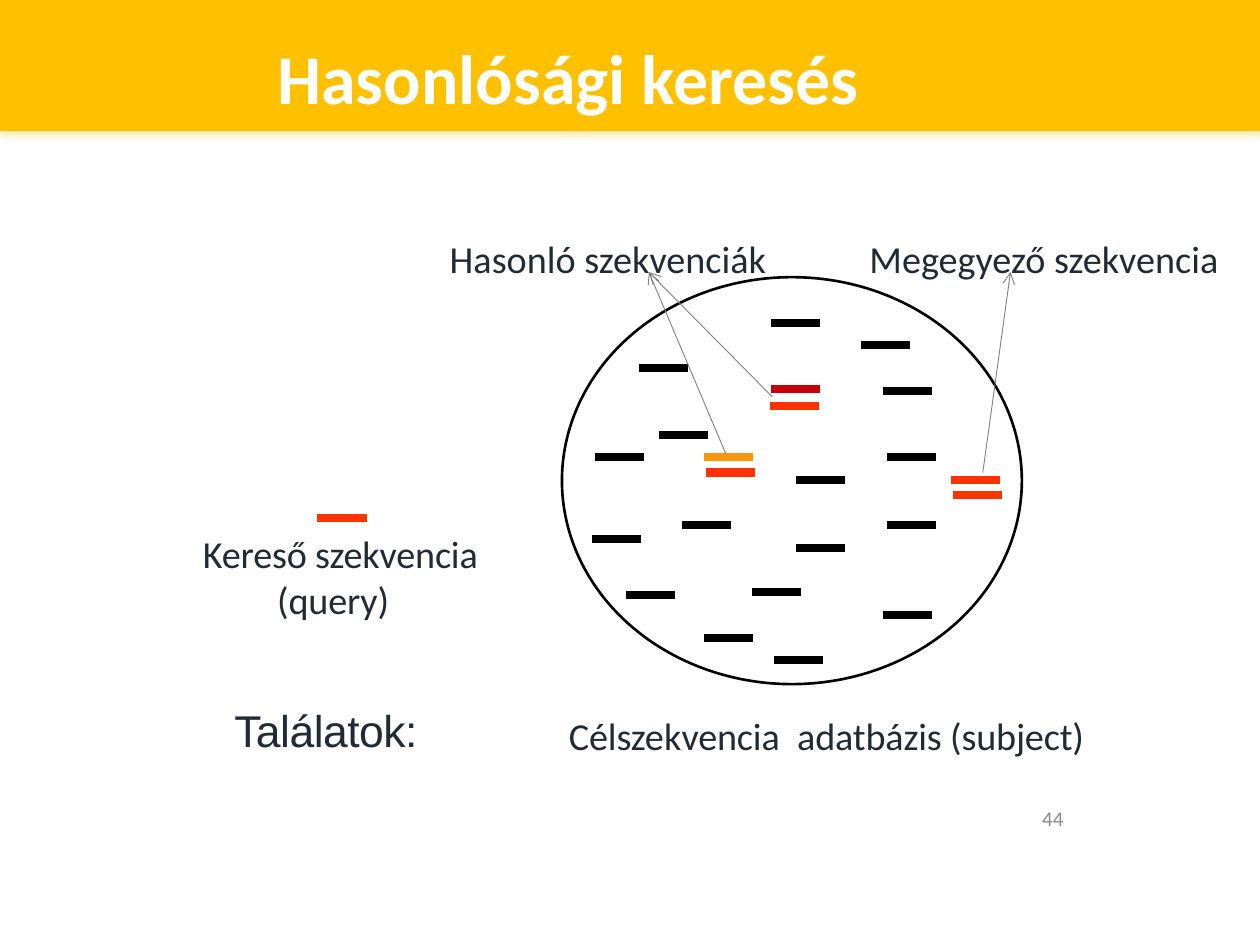
from lxml import etree
from pptx import Presentation
from pptx.dml.color import RGBColor
from pptx.enum.shapes import MSO_CONNECTOR, MSO_SHAPE
from pptx.enum.text import MSO_ANCHOR, MSO_AUTO_SIZE, PP_ALIGN
from pptx.oxml.ns import qn
from pptx.util import Inches, Pt

STRAIGHT = MSO_CONNECTOR.STRAIGHT
RECTANGLE, OVAL = MSO_SHAPE.RECTANGLE, MSO_SHAPE.OVAL
TOP, MIDDLE = MSO_ANCHOR.TOP, MSO_ANCHOR.MIDDLE
FIT_SHAPE = MSO_AUTO_SIZE.SHAPE_TO_FIT_TEXT
LEFT, CENTER, RIGHT = PP_ALIGN.LEFT, PP_ALIGN.CENTER, PP_ALIGN.RIGHT

AMBER = RGBColor(0xFF, 0xC0, 0x00)
WHITE = RGBColor(0xFF, 0xFF, 0xFF)
BLACK = RGBColor(0x00, 0x00, 0x00)
SLATE = RGBColor(0x22, 0x2A, 0x35)
GREY = RGBColor(0x80, 0x80, 0x80)
PALE_GREY = RGBColor(0x8C, 0x8C, 0x8C)
QUERY_RED = RGBColor(0xFF, 0x33, 0x00)
CRIMSON = RGBColor(0xC4, 0x00, 0x0A)
ORANGE = RGBColor(0xFF, 0x94, 0x0D)

SEQUENCE_LENGTH = 0.39
HANGING = (0.6, -0.59)

UNRELATED_SEQUENCES = [
    (5.41, 4.17), (5.97, 4.7), (4.97, 4.72), (5.59, 5.06), (6.32, 4.35),
    (5.23, 3.45), (6.32, 3.81), (7.04, 4.17), (6.14, 5.24), (7.01, 4.88),
    (7.04, 3.63), (7.01, 3.1), (6.12, 2.56), (5.07, 2.92), (4.72, 3.63),
    (4.7, 4.28), (6.83, 2.74),
]
HITS = [(6.12, 3.09, CRIMSON), (5.59, 3.63, ORANGE), (7.55, 3.81, QUERY_RED)]
QUERY_COPIES = [(2.52, 4.11), (5.6, 3.75), (6.11, 3.22), (7.56, 3.93)]
SIMILAR_TIP, IDENTICAL_TIP = (5.15, 2.16), (8.02, 2.16)


class SlideBuilder:
    font = "Calibri"
    size = 21.8
    color = SLATE

    def __init__(self, slide):
        self.slide = slide

    def band(self, left, top, width, height, color):
        band = self.slide.shapes.add_shape(
            RECTANGLE, Inches(left), Inches(top), Inches(width), Inches(height))
        band.fill.solid()
        band.fill.fore_color.rgb = color
        band.line.fill.background()
        band.shadow.inherit = False
        effects = band._element.spPr.find(qn("a:effectLst"))
        shadow = etree.SubElement(
            effects, qn("a:outerShdw"), blurRad=str(Pt(3.5)), dist=str(Pt(2.2)),
            dir="5400000", algn="t", rotWithShape="0")
        tint = etree.SubElement(shadow, qn("a:srgbClr"), val=str(color))
        etree.SubElement(tint, qn("a:alpha"), val="32000")

    def ellipse(self, left, top, width, height):
        ellipse = self.slide.shapes.add_shape(
            OVAL, Inches(left), Inches(top), Inches(width), Inches(height))
        ellipse.shadow.inherit = False
        ellipse.fill.background()
        ellipse.line.color.rgb = BLACK
        ellipse.line.width = Pt(1.5)

    def line(self, start, end, color, weight):
        line = self.slide.shapes.add_connector(
            STRAIGHT, *(Inches(value) for value in (*start, *end)))
        line.line.color.rgb = color
        line.line.width = Pt(weight)
        etree.SubElement(line._element.spPr, qn("a:effectLst"))
        return line

    def sequence(self, left, top, color):
        self.line((left, top), (left + SEQUENCE_LENGTH, top), color, 4.6)

    def arrow(self, start, end):
        arrow = self.line(start, end, GREY, 0.5)
        etree.SubElement(arrow.line._get_or_add_ln(), qn("a:tailEnd"), type="arrow")

    def text(self, box, runs, size=None, font=None, color=None, bold=False,
             align=LEFT, anchor=TOP, indent=(0.01, 0), inset=0.01,
             before=0.9, line_spacing=None):
        label = self.slide.shapes.add_textbox(*(Inches(value) for value in box))
        frame = label.text_frame
        frame.word_wrap = True
        frame.auto_size = FIT_SHAPE
        frame.vertical_anchor = anchor
        frame.margin_left = frame.margin_right = frame.margin_bottom = 0
        frame.margin_top = Inches(inset)
        paragraph = frame.paragraphs[0]
        paragraph.alignment = align
        paragraph.space_before = Pt(before)
        if line_spacing:
            paragraph.line_spacing = Pt(line_spacing)
        properties = paragraph._p.get_or_add_pPr()
        for name, value in zip(("marL", "indent"), indent):
            properties.set(name, str(Inches(value)))
        for wording, spacing in runs:
            run = paragraph.add_run()
            run.text = wording
            run.font.name = font or self.font
            run.font.size = Pt(size or self.size)
            run.font.bold = bold
            run.font.color.rgb = color or self.color
            run._r.get_or_add_rPr().set("spc", str(round(spacing * 100)))


def main():
    deck = Presentation()
    deck.slide_width, deck.slide_height = Inches(10), Inches(7.5)
    builder = SlideBuilder(deck.slides.add_slide(deck.slide_layouts[6]))

    builder.band(0, 0, 10, 1.04, AMBER)
    builder.text((2.19, 0.26, 5.54, 0.68), [("Hasonlósági keresés", 0)],
                 size=39.9, color=WHITE, bold=True, anchor=MIDDLE)
    builder.text((6.4, 6.39, 2.04, 0.2), [("44", 0)], size=12, color=PALE_GREY,
                 align=RIGHT, anchor=MIDDLE, indent=(0.03, 0), inset=0,
                 before=0, line_spacing=14.8)

    for left, top, color in HITS:
        builder.sequence(left, top, color)
    for left, top in UNRELATED_SEQUENCES:
        builder.sequence(left, top, BLACK)
    builder.ellipse(4.46, 2.2, 3.65, 3.23)

    builder.text((4.17, 5.64, 4.76, 0.38),
                 [("Célsze", -0.1), ("k", 0.1), ("venci", -0.1), ("a", 0),
                  (" ", 4.9), ("adatbázis (subject)", -0.1)],
                 align=CENTER, indent=(0.11, -0.09))
    builder.text((1.6, 4.2, 2.55, 0.75), [("Kereső szekvencia (query)", -0.1)],
                 indent=HANGING)
    for left, top in QUERY_COPIES:
        builder.sequence(left, top, QUERY_RED)
    builder.text((1.85, 5.57, 1.56, 0.44), [("Találatok:", -0.3)],
                 size=25.4, font="Arial")

    builder.arrow((7.8, 3.75), IDENTICAL_TIP)
    builder.arrow((6.13, 3.15), SIMILAR_TIP)
    builder.arrow((5.76, 3.6), SIMILAR_TIP)
    builder.text((3.56, 1.86, 2.57, 0.38), [("Hasonló szekvenciák", 0)],
                 indent=HANGING)
    builder.text((6.89, 1.86, 2.95, 0.38), [("Megegyező szekvencia", 0)],
                 indent=HANGING)

    deck.save("out.pptx")


if __name__ == "__main__":
    main()
